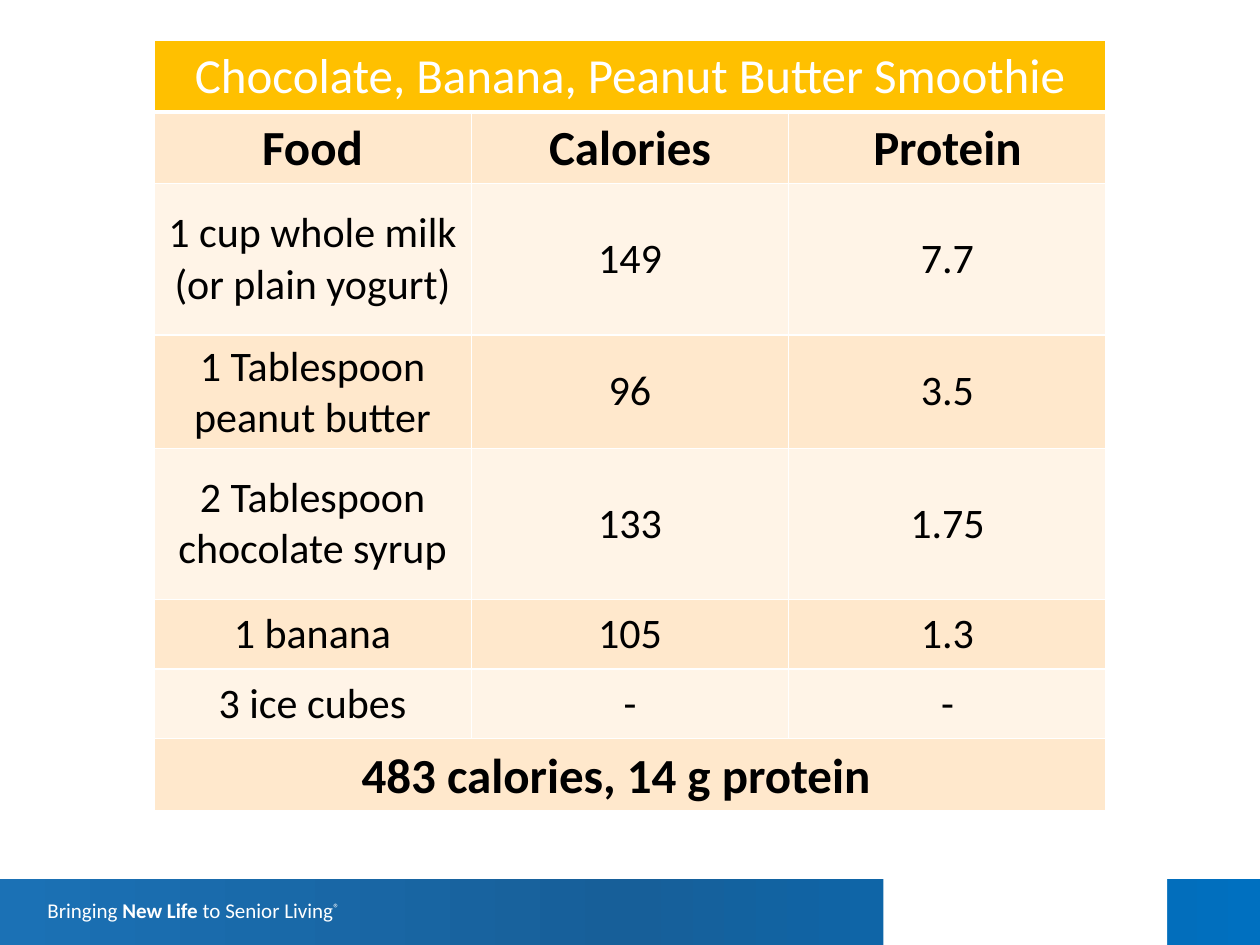
"""Build the smoothie nutrition slide with its table and footer band."""
from copy import deepcopy

from pptx import Presentation
from pptx.dml.color import RGBColor
from pptx.enum.shapes import MSO_SHAPE as Shape
from pptx.enum.text import MSO_ANCHOR as Anchor, MSO_AUTO_SIZE as AutoSize, PP_ALIGN as Align
from pptx.oxml import parse_xml
from pptx.oxml.ns import nsdecls, qn
from pptx.util import Cm, Pt

FONT = "Calibri"
WHITE = RGBColor(0xFF, 0xFF, 0xFF)
BLACK = RGBColor(0x00, 0x00, 0x00)
GOLD = RGBColor(0xFF, 0xC0, 0x00)
PEACH = RGBColor(0xFF, 0xE8, 0xCC)
CREAM = RGBColor(0xFF, 0xF4, 0xE7)
BAND_STOPS = [
    (0, RGBColor(0x00, 0x70, 0xC0)),
    (0.5, RGBColor(0x17, 0x5F, 0x99)),
    (1, RGBColor(0x1B, 0x71, 0xB5)),
]

TITLE = "Chocolate, Banana, Peanut Butter Smoothie"
HEADINGS = ("Food", "Calories", "Protein")
FOODS = [
    ("1 cup whole milk (or plain yogurt)", "149", "7.7"),
    ("1 Tablespoon peanut butter", "96", "3.5"),
    ("2 Tablespoon chocolate syrup", "133", "1.75"),
    ("1 banana", "105", "1.3"),
    ("3 ice cubes", "-", "-"),
]
TOTAL = "483 calories, 14 g protein"
TAGLINE = [("Bringing ", False), ("New Life ", True), ("to Senior Living", False), ("®", False)]

ROWS = [(TITLE, "", ""), HEADINGS, *FOODS, ("", "", "")]
ROW_HEIGHTS = [1.37, 1.37, 3.05, 2.11, 3.05, 1.4, 1.4, 1.46]
COLUMN_WIDTH = 6.4


def style_font(font, size, color, bold=False):
    font.name, font.size, font.bold = FONT, Pt(size), bold
    font.color.rgb = color


def add_block(page, left, top, width, height):
    block = page.shapes.add_shape(Shape.RECTANGLE, Cm(left), Cm(top), Cm(width), Cm(height))
    block.shadow.inherit = False
    block.line.fill.background()
    return block


def add_footer(page):
    band = add_block(page, 0, 17.73, 25.4, 1.32)
    band.fill.gradient()
    stop_list = band._element.spPr.find(qn("a:gradFill")).find(qn("a:gsLst"))
    stop_list.append(deepcopy(stop_list[0]))
    for stop, (position, color) in zip(band.fill.gradient_stops, BAND_STOPS):
        stop.position = position
        stop.color.rgb = color
    band.fill.gradient_angle = 180

    box = page.shapes.add_textbox(Cm(0), Cm(17.83), Cm(7.8), Cm(1.04))
    box.text_frame.word_wrap = True
    box.text_frame.vertical_anchor = Anchor.MIDDLE
    para = box.text_frame.paragraphs[0]
    para.alignment = Align.CENTER
    for text, bold in TAGLINE:
        span = para.add_run()
        span.text = text
        style_font(span.font, 12, WHITE, bold)
    span.font._element.set("baseline", "30000")

    gap = add_block(page, 17.81, 17.68, 5.72, 1.37)
    gap.fill.solid()
    gap.fill.fore_color.rgb = WHITE


def set_borders(cell, bottom):
    widths = {"lnL": 1, "lnR": 1, "lnT": 1, "lnB": bottom}
    for index, (side, width) in enumerate(widths.items()):
        border = parse_xml(
            f'<a:{side} {nsdecls("a")} w="{Pt(width)}"><a:solidFill>'
            f'<a:srgbClr val="{WHITE}"/></a:solidFill></a:{side}>'
        )
        cell._tc.get_or_add_tcPr().insert(index, border)


def add_nutrition_table(page):
    columns = len(HEADINGS)
    frame = page.shapes.add_table(
        len(ROWS), columns, Cm(3.1), Cm(0.82), Cm(COLUMN_WIDTH * columns), Cm(sum(ROW_HEIGHTS))
    )
    table = frame.table
    for column in table.columns:
        column.width = Cm(COLUMN_WIDTH)
    for number, (texts, height) in enumerate(zip(ROWS, ROW_HEIGHTS)):
        table.rows[number].height = Cm(height)
        is_title, is_heading = number == 0, number == 1
        fill = GOLD if is_title else PEACH if number % 2 else CREAM
        if number == len(ROWS) - 1:
            fill = PEACH
        for cell, text in zip(table.rows[number].cells, texts):
            cell.fill.solid()
            cell.fill.fore_color.rgb = fill
            set_borders(cell, 3 if is_title else 1)
            cell.vertical_anchor = Anchor.MIDDLE
            cell.text = text
            para = cell.text_frame.paragraphs[0]
            para.alignment = Align.CENTER
            for span in para.runs:
                style_font(
                    span.font, 28 if number < 2 else 24, WHITE if is_title else BLACK, is_heading
                )
    for number in (0, len(ROWS) - 1):
        table.cell(number, 0).merge(table.cell(number, columns - 1))


def add_total(page):
    box = page.shapes.add_textbox(Cm(7.04), Cm(14.88), Cm(12.4), Cm(1.45))
    box.text_frame.text = TOTAL
    box.text_frame.word_wrap = False
    box.text_frame.auto_size = AutoSize.SHAPE_TO_FIT_TEXT
    style_font(box.text_frame.paragraphs[0].runs[0].font, 28, BLACK, True)


def main():
    deck = Presentation()
    deck.slide_width, deck.slide_height = Cm(25.4), Cm(19.05)
    page = deck.slides.add_slide(deck.slide_layouts[6])
    add_footer(page)
    add_nutrition_table(page)
    add_total(page)
    deck.save("out.pptx")


if __name__ == "__main__":
    main()
